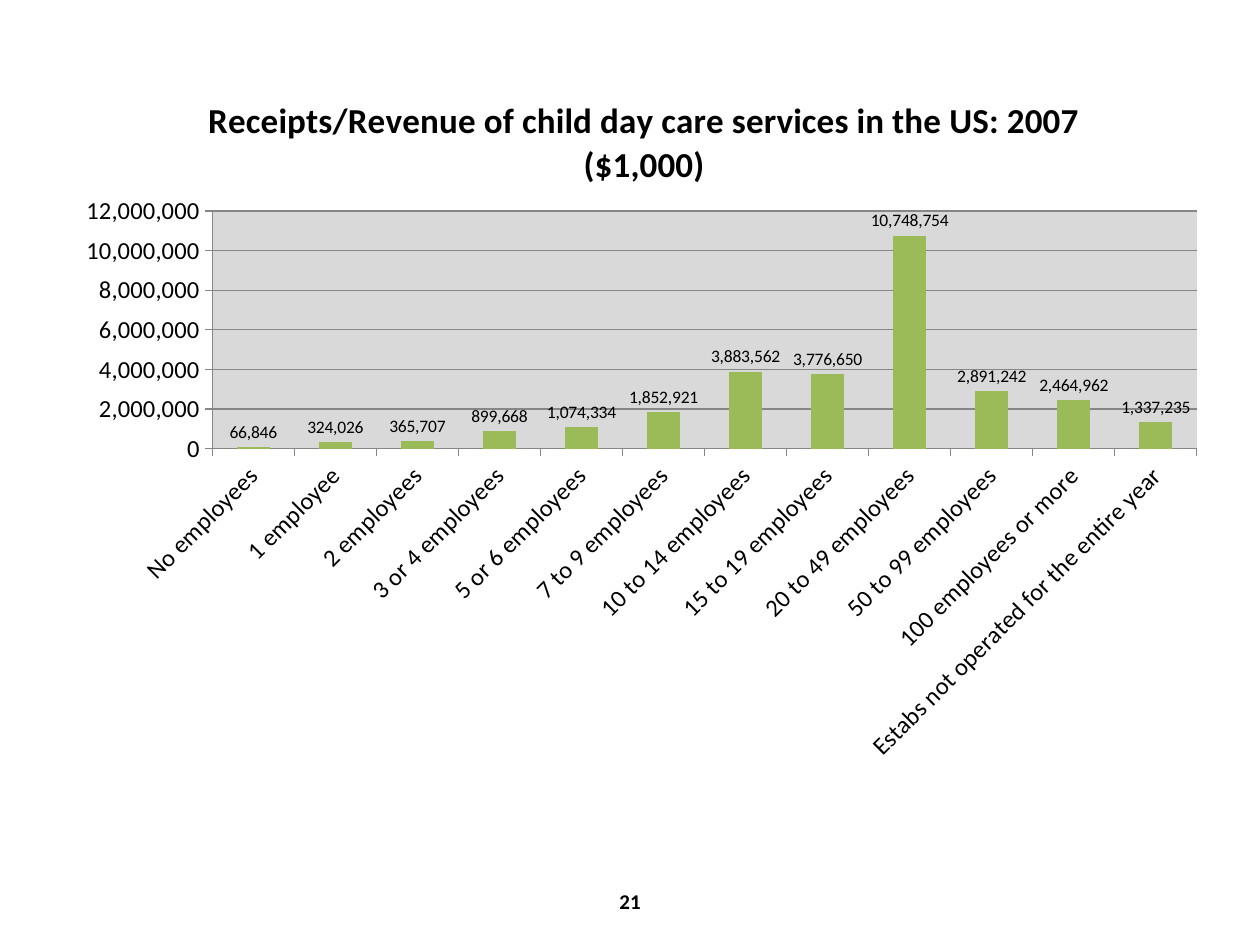
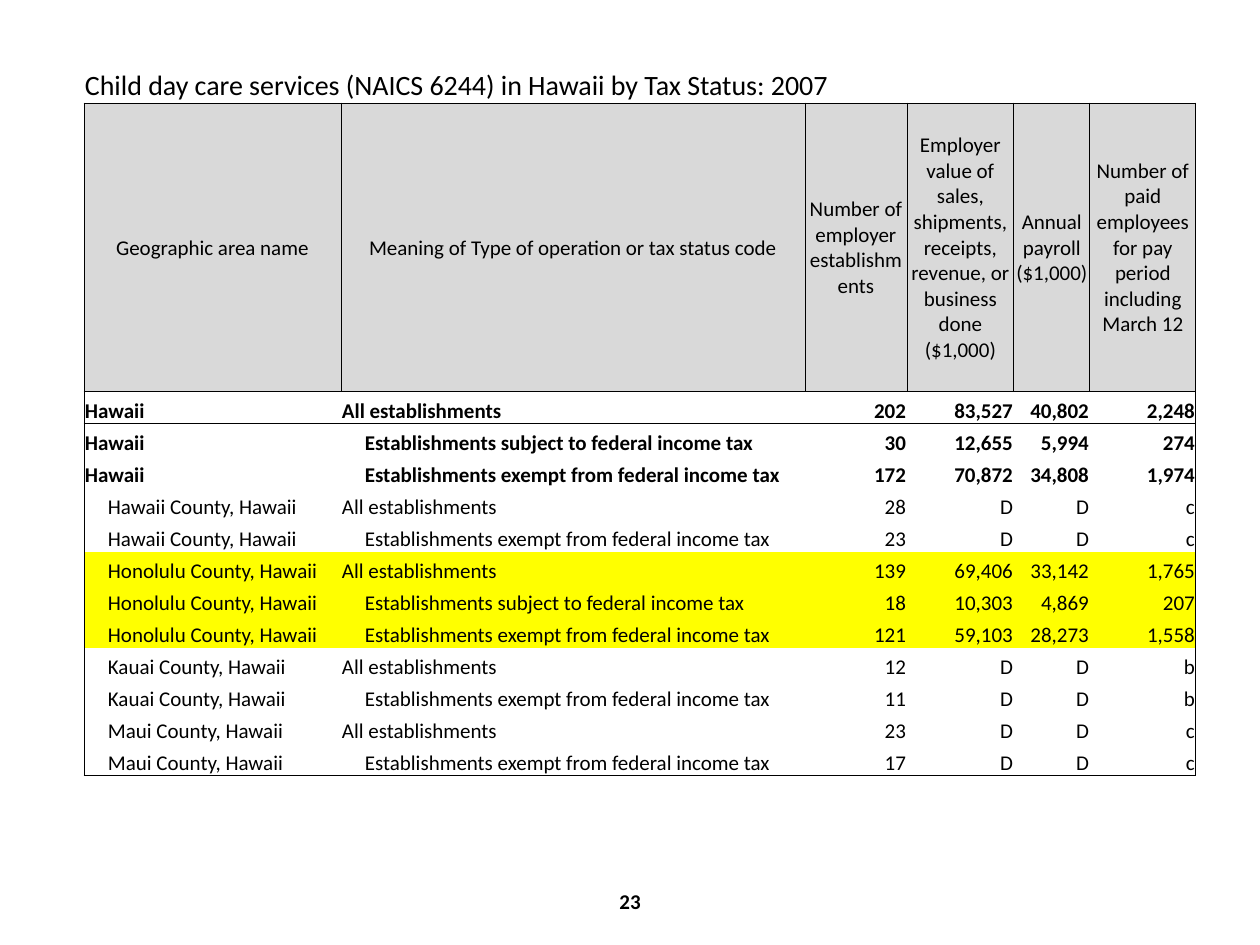
from pptx import Presentation
from pptx.chart.data import CategoryChartData
from pptx.dml.color import RGBColor
from pptx.enum.chart import XL_CHART_TYPE as ChartType
from pptx.enum.chart import XL_LABEL_POSITION as LabelPosition
from pptx.enum.chart import XL_TICK_MARK as TickMark
from pptx.enum.text import MSO_ANCHOR as Anchor
from pptx.enum.text import PP_ALIGN as Align
from pptx.oxml import parse_xml
from pptx.oxml.ns import nsdecls, qn
from pptx.util import Emu, Pt

BLACK = RGBColor(0x00, 0x00, 0x00)
GRAY = RGBColor(0xD9, 0xD9, 0xD9)
AXIS_GRAY = RGBColor(0x86, 0x86, 0x86)
GREEN = RGBColor(0x9B, 0xBB, 0x59)
YELLOW = RGBColor(0xFF, 0xFF, 0x00)
PLAIN_TABLE = "{2D5ABB26-0587-4C30-8999-92F81FD0307C}"

RECEIPTS = {
    "No employees": 66846,
    "1 employee": 324026,
    "2 employees": 365707,
    "3 or 4 employees": 899668,
    "5 or 6 employees": 1074334,
    "7 to 9 employees": 1852921,
    "10 to 14 employees": 3883562,
    "15 to 19 employees": 3776650,
    "20 to 49 employees": 10748754,
    "50 to 99 employees": 2891242,
    "100 employees or more": 2464962,
    "Estabs not operated for the entire year": 1337235,
}

ALL = "All establishments"
TAXED = "Establishments subject to federal income tax"
EXEMPT = "Establishments exempt from federal income tax"
HAWAII_COUNTY = "Hawaii County, Hawaii"
HONOLULU = "Honolulu County, Hawaii"
KAUAI = "Kauai County, Hawaii"
MAUI = "Maui County, Hawaii"

TAX_TITLE = "Child day care services (NAICS 6244) in Hawaii by Tax Status: 2007"
TAX_HEADER = (
    "Geographic area name",
    "Meaning of Type of operation or tax status code",
    "Number of employer establishments",
    "Employer value of sales, shipments, receipts, revenue, or business done ($1,000)",
    "Annual payroll ($1,000)",
    "Number of paid employees for pay period including March 12",
)
TAX_ROWS = [
    ("Hawaii", ALL, "202", "83,527", "40,802", "2,248"),
    ("Hawaii", TAXED, "30", "12,655", "5,994", "274"),
    ("Hawaii", EXEMPT, "172", "70,872", "34,808", "1,974"),
    (HAWAII_COUNTY, ALL, "28", "D", "D", "c"),
    (HAWAII_COUNTY, EXEMPT, "23", "D", "D", "c"),
    (HONOLULU, ALL, "139", "69,406", "33,142", "1,765"),
    (HONOLULU, TAXED, "18", "10,303", "4,869", "207"),
    (HONOLULU, EXEMPT, "121", "59,103", "28,273", "1,558"),
    (KAUAI, ALL, "12", "D", "D", "b"),
    (KAUAI, EXEMPT, "11", "D", "D", "b"),
    (MAUI, ALL, "23", "D", "D", "c"),
    (MAUI, EXEMPT, "17", "D", "D", "c"),
]
TAX_WIDTHS = (257, 464, 102, 107, 76, 106)


def px(length):
    return Emu(round(length * 914400 / 126))


def style_font(font, size, bold=False):
    font.name = "Calibri"
    font.size = Pt(size)
    font.bold = bold
    font.color.rgb = BLACK


def write(frame, text, size=12, bold=False, align=Align.LEFT):
    paragraph = frame.paragraphs[0]
    paragraph.alignment = align
    if text:
        run = paragraph.add_run()
        run.text = text
        style_font(run.font, size, bold)
    else:
        style_font(paragraph.font, size, bold)


def manual_layout(x, y, width=None, height=None):
    target = '<c:layoutTarget val="inner"/>' if width else ""
    extent = f'<c:w val="{width}"/><c:h val="{height}"/>' if width else ""
    return parse_xml(
        f'<c:layout {nsdecls("c")}><c:manualLayout>{target}'
        '<c:xMode val="edge"/><c:yMode val="edge"/>'
        f'<c:x val="{x}"/><c:y val="{y}"/>{extent}'
        "</c:manualLayout></c:layout>"
    )


def set_layout(parent, index, layout):
    for previous in parent.findall(qn("c:layout")):
        parent.remove(previous)
    parent.insert(index, layout)


def add_borders(cell, sides):
    properties = cell._tc.get_or_add_tcPr()
    for side in "LRTB":
        if side in sides:
            properties.append(parse_xml(
                f'<a:ln{side} {nsdecls("a")} w="6350"><a:solidFill>'
                f'<a:srgbClr val="{BLACK}"/></a:solidFill></a:ln{side}>'
            ))


class Deck:
    def __init__(self):
        self.presentation = Presentation()
        self.presentation.slide_width = px(1260)
        self.presentation.slide_height = px(945)
        self.slide = None

    def new_slide(self, number):
        blank = self.presentation.slide_layouts[6]
        self.slide = self.presentation.slides.add_slide(blank)
        footer = self.slide.shapes.add_textbox(px(483), px(876), px(294), px(50))
        frame = footer.text_frame
        frame.word_wrap = True
        frame.vertical_anchor = Anchor.MIDDLE
        write(frame, str(number), bold=True, align=Align.CENTER)

    def column_chart(self, title, amounts, left, top, width, height):
        data = CategoryChartData(number_format="#,##0")
        data.categories = list(amounts)
        data.add_series("Series 1", list(amounts.values()))
        chart = self.slide.shapes.add_chart(
            ChartType.COLUMN_CLUSTERED, px(left), px(top), px(width), px(height), data
        ).chart
        style_font(chart.font, 14)
        chart.has_legend = False
        chart.has_title = True
        write(chart.chart_title.text_frame, title, 20, True, Align.CENTER)
        set_layout(chart.chart_title._element, 1, manual_layout(0.12, 0.05))

        plot = chart.plots[0]
        plot.gap_width = 150
        plot.vary_by_categories = False
        fill = plot.series[0].format.fill
        fill.solid()
        fill.fore_color.rgb = GREEN
        plot.has_data_labels = True
        labels = plot.data_labels
        labels.show_value = True
        labels.number_format = "#,##0"
        labels.number_format_is_linked = False
        labels.position = LabelPosition.OUTSIDE_END
        style_font(labels.font, 10)

        self.axes(chart)
        area = chart._chartSpace.find(".//" + qn("c:plotArea"))
        set_layout(area, 0, manual_layout(0.129, 0.218, 0.851, 0.328))
        area.append(parse_xml(
            f'<c:spPr {nsdecls("c", "a")}><a:solidFill>'
            f'<a:srgbClr val="{GRAY}"/></a:solidFill></c:spPr>'
        ))

    def axes(self, chart):
        amount, category = chart.value_axis, chart.category_axis
        amount.minimum_scale = 0
        amount.maximum_scale = 12000000
        amount.major_unit = 2000000
        amount.has_major_gridlines = True
        amount.tick_labels.number_format = "#,##0"
        amount.tick_labels.number_format_is_linked = False
        for axis in (amount, category):
            axis.major_tick_mark = TickMark.OUTSIDE
            style_font(axis.tick_labels.font, 14)
        for part in (amount, category, amount.major_gridlines):
            part.format.line.color.rgb = AXIS_GRAY
            part.format.line.width = Pt(0.75)
        rotation = category._element.find(qn("c:txPr")).find(qn("a:bodyPr"))
        rotation.set("rot", "-2700000")
        rotation.set("vert", "horz")

    def cell(self, cell, text, borders="", fill=None, indent=1,
             anchor=Anchor.BOTTOM, **text_format):
        cell.margin_left = px(indent)
        cell.margin_right = cell.margin_top = px(1)
        cell.margin_bottom = 0
        cell.vertical_anchor = anchor
        add_borders(cell, borders)
        if fill is None:
            cell.fill.background()
        else:
            cell.fill.solid()
            cell.fill.fore_color.rgb = fill
        write(cell.text_frame, text, **text_format)

    def tax_table(self, title, header, rows, widths, left, top):
        heights = [50, 289] + [32] * len(rows)
        frame = self.slide.shapes.add_table(
            len(heights), len(widths), px(left), px(top), px(sum(widths)), px(sum(heights))
        )
        table = frame.table
        table.first_row = table.horz_banding = False
        table._tbl.tblPr.find(qn("a:tableStyleId")).text = PLAIN_TABLE
        for column, width in zip(table.columns, widths):
            column.width = px(width)
        for row, height in zip(table.rows, heights):
            row.height = px(height)

        last = len(widths) - 1
        table.cell(0, 0).merge(table.cell(0, 2))
        for c, heading in enumerate(header):
            self.cell(table.cell(0, c), "" if c else title, "B", size=16)
            self.cell(table.cell(1, c), heading, "LRTB", GRAY,
                      anchor=Anchor.MIDDLE, align=Align.CENTER)
        for r, row in enumerate(rows):
            area = row[0]
            ends = ("T" if r == 0 else "") + ("B" if r == len(rows) - 1 else "")
            for c, text in enumerate(row):
                sides = ends + ("L" if c == 0 else "") + ("R" if c == last else "")
                nested = text == area != "Hawaii" or text in (TAXED, EXEMPT)
                self.cell(
                    table.cell(r + 2, c), text, sides,
                    YELLOW if area == HONOLULU else None,
                    indent=24 if nested else 1,
                    bold=area == "Hawaii",
                    align=Align.RIGHT if c > 1 else Align.LEFT,
                )


def main():
    deck = Deck()
    deck.new_slide(21)
    deck.column_chart(
        "Receipts/Revenue of child day care services in the US: 2007 ($1,000)",
        RECEIPTS, 63, 53, 1157, 725,
    )
    deck.new_slide(23)
    deck.tax_table(TAX_TITLE, TAX_HEADER, TAX_ROWS, TAX_WIDTHS, 84, 53)
    deck.presentation.save("out.pptx")


if __name__ == "__main__":
    main()
